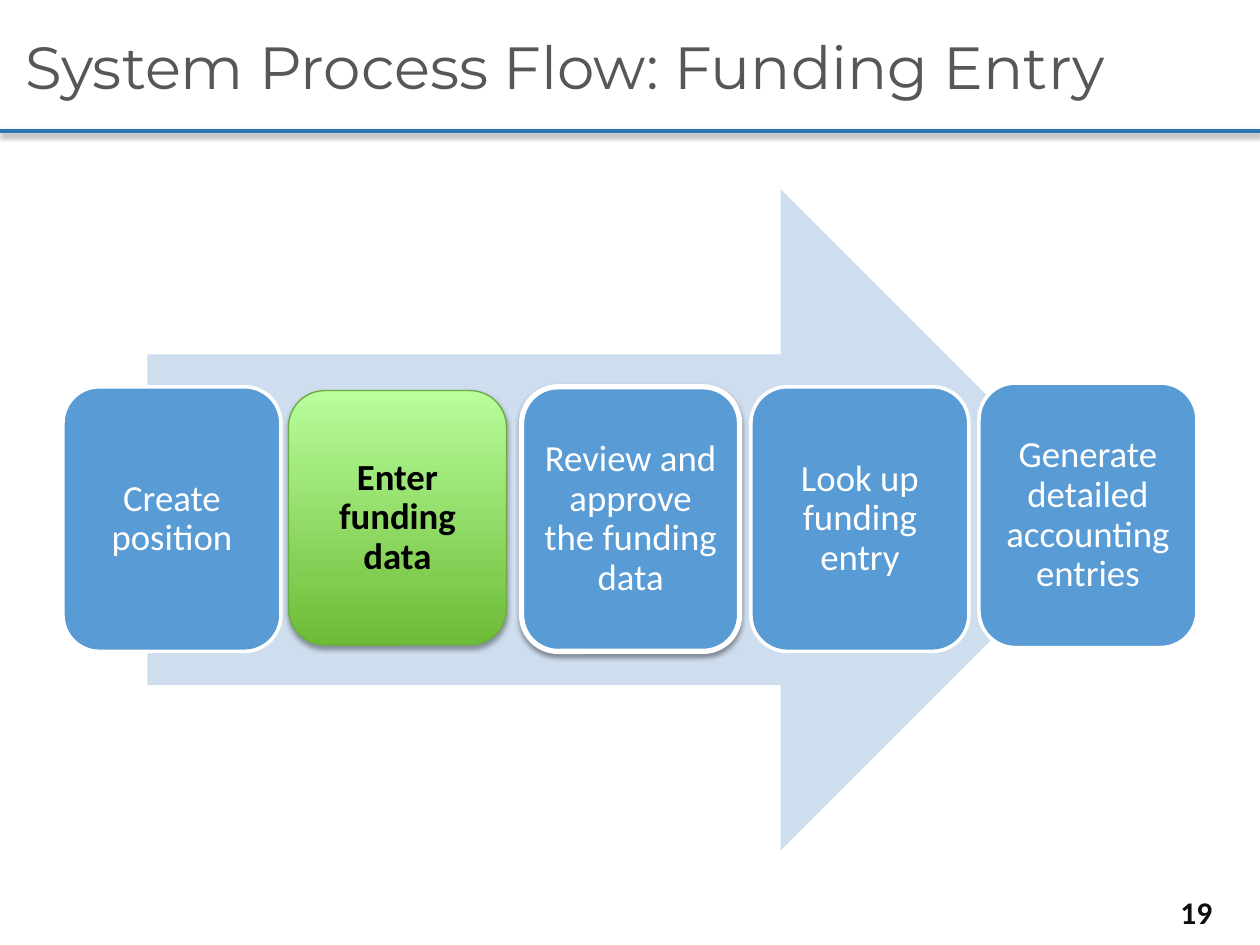
from lxml import etree
from pptx import Presentation
from pptx import util as u
from pptx.dml.color import RGBColor
from pptx.enum import shapes, text
from pptx.oxml.ns import qn

COLORS = {
    "rule": "2E75B6", "arrow": "CFDEEF", "step": "599BD5", "white": "FFFFFF",
    "title": "555759", "number": "0D0D0D", "black": "000000",
    "active_dark": "6DBC37", "active_light": "B8FE9C", "active_edge": "6CAB42",
}


def rgb(name):
    return RGBColor.from_string(COLORS[name])


class FlowSlide:
    body_font = "Calibri"
    title_font = "Montserrat"

    def __init__(self, prs):
        self.slide = prs.slides.add_slide(prs.slide_layouts[5])
        self.shapes = self.slide.shapes

    def fill_text(self, frame, words, color, inset, **font_values):
        for side, margin in zip(("left", "top", "right", "bottom"), inset):
            setattr(frame, f"margin_{side}", u.Inches(margin))
        frame.word_wrap = True
        frame.auto_size = text.MSO_AUTO_SIZE.NONE
        paragraph = frame.paragraphs[0]
        run = paragraph.add_run()
        run.text = words
        for key, value in {"name": self.body_font, **font_values}.items():
            setattr(run.font, key, value)
        run.font.color.rgb = rgb(color)
        return paragraph

    def cast_shadow(self, element, opacity=38, distance=1.6):
        """Put a soft downward shadow in place of the theme's effect."""
        properties = element.spPr
        for old in properties.findall(qn("a:effectLst")):
            properties.remove(old)
        effects = etree.SubElement(properties, qn("a:effectLst"))
        shadow = etree.SubElement(
            effects, qn("a:outerShdw"), blurRad=str(u.Pt(3.1)),
            dist=str(u.Pt(distance)), dir="5400000", rotWithShape="0")
        tint = etree.SubElement(shadow, qn("a:srgbClr"), val=COLORS["black"])
        etree.SubElement(tint, qn("a:alpha"), val=str(opacity * 1000))

    def title(self, words):
        title = self.shapes.title
        box = {"left": 0.1, "top": 0, "width": 10, "height": 1.05}
        for key, value in box.items():
            setattr(title, key, u.Inches(value))
        paragraph = self.fill_text(title.text_frame, words, "title",
                                   (0.1, 0.05, 0.1, 0.05),
                                   name=self.title_font, size=u.Pt(34))
        paragraph.alignment = text.PP_ALIGN.LEFT
        title.text_frame.vertical_anchor = text.MSO_ANCHOR.MIDDLE

    def rule(self, y):
        rule = self.shapes.add_connector(
            shapes.MSO_CONNECTOR.STRAIGHT, 0, u.Inches(y), u.Inches(10), u.Inches(y))
        rule.line.color.rgb = rgb("rule")
        rule.line.width = u.Pt(2.25)
        self.cast_shadow(rule._element)

    def block(self, preset, left, top, width, height, fill):
        block = self.shapes.add_shape(
            preset, *(u.Inches(v) for v in (left, top, width, height)))
        block.shadow.inherit = False
        block.fill.solid()
        block.fill.fore_color.rgb = rgb(fill)
        block.line.fill.background()
        return block

    def arrow(self, left, top, width, height):
        self.block(shapes.MSO_SHAPE.RIGHT_ARROW, left, top, width, height, "arrow")

    def step(self, words, left, top, height=2.1, edge="white", edge_width=2,
             color="white", bold=False):
        step = self.block(shapes.MSO_SHAPE.ROUNDED_RECTANGLE,
                          left, top, 1.73, height, "step")
        step.line.color.rgb = rgb(edge)
        step.line.width = u.Pt(edge_width)
        paragraph = self.fill_text(step.text_frame, words, color, (0.09,) * 4,
                                   size=u.Pt(21), bold=bold)
        paragraph.alignment = text.PP_ALIGN.CENTER
        paragraph.line_spacing = 0.9
        step.text_frame.vertical_anchor = text.MSO_ANCHOR.MIDDLE
        return step

    def active_step(self, words, left, top):
        """Add the highlighted step, shaded light at the top to dark below."""
        step = self.step(words, left, top, 2.02, "active_edge", 0.75, "black", True)
        step.fill.gradient()
        step.fill.gradient_angle = 90
        shades = ((0, "active_dark"), (1, "active_light"))
        for stop, (position, name) in zip(step.fill.gradient_stops, shades):
            stop.position = position
            stop.color.rgb = rgb(name)
        self.cast_shadow(step._element, 35, 1.8)

    def page_number(self, number):
        box = self.shapes.add_textbox(
            *(u.Inches(v) for v in (9.27, 7.04, 0.6, 0.4)))
        self.fill_text(box.text_frame, number, "number", (0.1, 0.05, 0.1, 0.05),
                       size=u.Pt(18), bold=True)


def main():
    prs = Presentation()
    prs.slide_width, prs.slide_height = u.Inches(10), u.Inches(7.5)
    flow = FlowSlide(prs)
    flow.title("System Process Flow: Funding Entry")
    flow.rule(1.04)
    flow.arrow(1.17, 1.5, 7.65, 5.25)
    flow.step("Create position", 0.5, 3.07)
    flow.active_step("Enter funding data", 2.29, 3.1)
    review = flow.step("Review and approve the funding data", 4.14, 3.07, edge_width=3)
    flow.cast_shadow(review._element)
    flow.step("Look up funding entry", 5.96, 3.07)
    flow.step("Generate detailed accounting entries", 7.77, 3.04)
    flow.page_number("19")
    prs.save("out.pptx")


if __name__ == "__main__":
    main()
